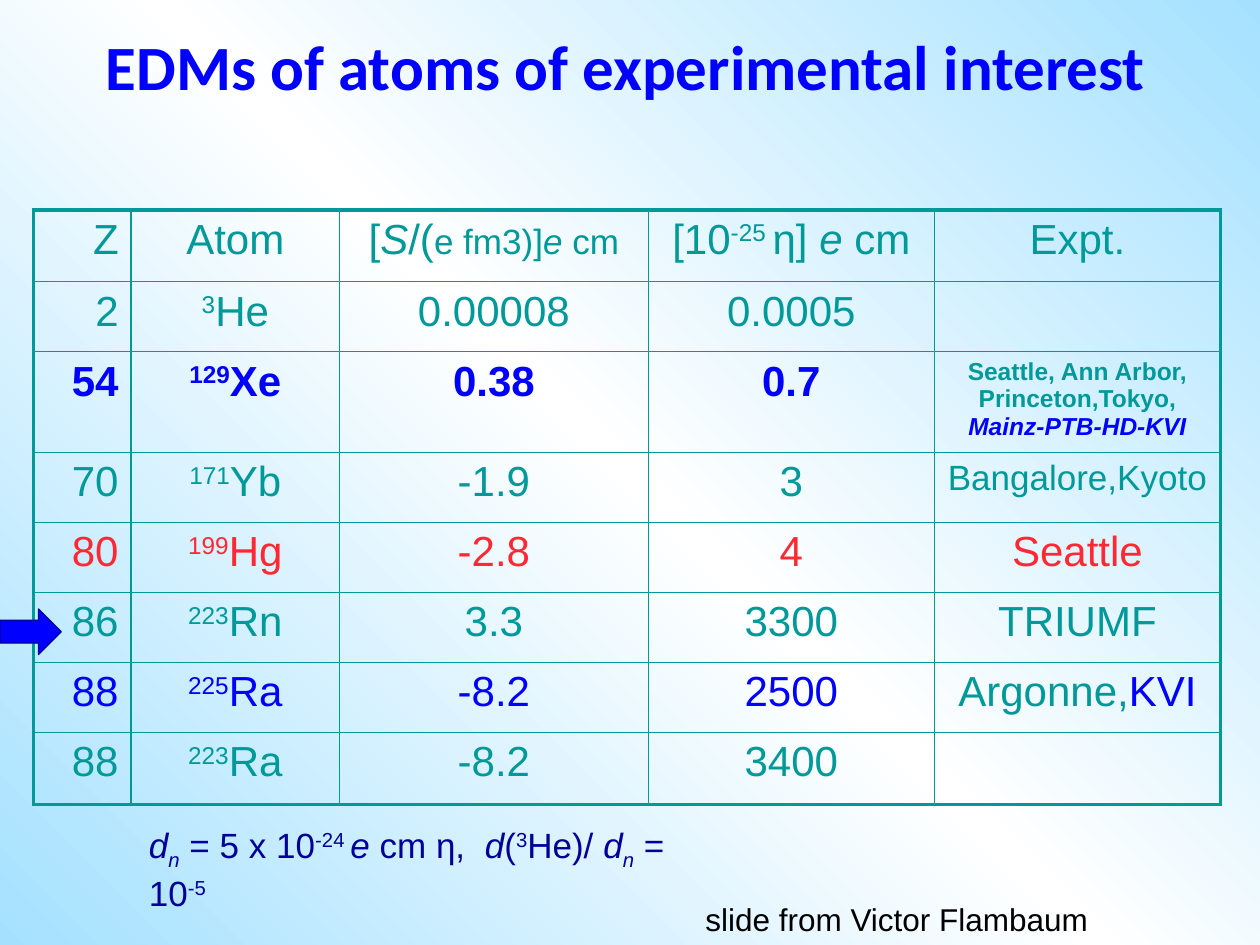
from copy import deepcopy
from dataclasses import dataclass

from lxml import etree
from pptx import Presentation
from pptx.dml.color import RGBColor
from pptx.enum.shapes import MSO_SHAPE
from pptx.enum.text import PP_ALIGN
from pptx.oxml.ns import qn
from pptx.util import Pt

LEFT, CENTER, RIGHT = PP_ALIGN.LEFT, PP_ALIGN.CENTER, PP_ALIGN.RIGHT
RIGHT_ARROW = MSO_SHAPE.RIGHT_ARROW


@dataclass(frozen=True)
class Theme:
    teal: str = "009999"
    blue: str = "0000FF"
    navy: str = "000099"
    red: str = "FF2833"
    black: str = "000000"
    sky: str = "A5E1FF"
    white: str = "FFFFFF"
    head_font: str = "Calibri"
    body_font: str = "Arial"
    title: int = 36
    cell: int = 24
    note: int = 20
    credit: int = 18
    small: int = 14
    outer: float = 2.25
    inner: float = 1


T = Theme()
ITALIC = {"italic": True}
SUP = {"base": 30000}
SUB = {"base": -25000}
SMALLER = {"size": T.note}
SITES = {"size": T.small, "bold": True}

COL_WIDTHS = [56, 119, 176.5, 163.5, 163.5]
ROW_HEIGHTS = [41, 40, 54.3, 40, 40, 40, 40, 41]
HEADER = [
    [("Z", {})],
    [("Atom", {})],
    [("[", {}), ("S", ITALIC), ("/(", {}), ("e fm3)]", SMALLER),
     ("e", SMALLER | ITALIC), (" cm", SMALLER)],
    [("[10", {}), ("-25 ", SUP), ("η] ", {}), ("e", ITALIC), (" cm", {})],
    [("Expt.", {})],
]
ATOMS = [
    ("2", "3", "He", "0.00008", "0.0005", [], {}),
    ("54", "129", "Xe", "0.38", "0.7",
     [("Seattle, Ann Arbor, Princeton,Tokyo, ", SITES | {"color": T.teal}),
      ("Mainz-PTB-HD-KVI", SITES | ITALIC)],
     {"color": T.blue, "bold": True}),
    ("70", "171", "Yb", "-1.9", "3", [("Bangalore,Kyoto", SMALLER)], {}),
    ("80", "199", "Hg", "-2.8", "4", [("Seattle", {})], {"color": T.red}),
    ("86", "223", "Rn", "3.3", "3300", [("TRIUMF", {})], {}),
    ("88", "225", "Ra", "-8.2", "2500",
     [("Argonne,", {"color": T.teal}), ("KVI", {})], {"color": T.blue}),
    ("88", "223", "Ra", "-8.2", "3400", [], {}),
]
NEUTRON = [
    ("d", ITALIC), ("n", ITALIC | SUB), (" = 5 x 10", {}), ("-24 ", SUP),
    ("e", ITALIC), (" cm η,  ", {}), ("d", ITALIC), ("(", {}), ("3", SUP),
    ("He)/ ", {}), ("d", ITALIC), ("n", ITALIC | SUB), (" = 10", {}), ("-5", SUP),
]


def rgb(color):
    return RGBColor.from_string(color)


def add_runs(p, runs, base, align):
    p.alignment = align
    for text, extra in runs:
        fmt = {"name": T.body_font} | base | extra
        r = p.add_run()
        r.text = text
        r.font.color.rgb = rgb(fmt.pop("color"))
        r.font.size = Pt(fmt.pop("size"))
        shift = fmt.pop("base", 0)
        if shift:
            r._r.get_or_add_rPr().set("baseline", str(shift))
        for key, value in fmt.items():
            setattr(r.font, key, value)


def add_background(s):
    fill = s.background.fill
    fill.gradient()
    fill.gradient_angle = 45
    first = fill.gradient_stops[0]._gs
    first.addnext(deepcopy(first))
    for stop, color, position in zip(
            fill.gradient_stops, (T.sky, T.white, T.sky), (0, 0.5, 1)):
        stop.color.rgb = rgb(color)
        stop.color.brightness = 0
        stop.position = position


def add_text(s, box, runs, base, align=LEFT, spacing=None):
    tf = s.shapes.add_textbox(*map(Pt, box)).text_frame
    tf.word_wrap = True
    p = tf.paragraphs[0]
    p.line_spacing = spacing
    add_runs(p, runs, base, align)


def set_borders(cell, widths):
    tcPr = cell._tc.get_or_add_tcPr()
    for side, width in widths.items():
        ln = etree.SubElement(tcPr, qn(f"a:ln{side}"), w=str(Pt(width)))
        solid = etree.SubElement(ln, qn("a:solidFill"))
        etree.SubElement(solid, qn("a:srgbClr"), val=T.teal)


def atom_cells(z, mass, symbol, schiff, eta, sites):
    return [[(z, {})], [(mass, SUP), (symbol, {})],
            [(schiff, {})], [(eta, {})], sites]


def add_atom_table(s, box):
    rows = [(HEADER, {})] + [(atom_cells(*a[:-1]), a[-1]) for a in ATOMS]
    last_row, last_col = len(rows) - 1, len(COL_WIDTHS) - 1
    table = s.shapes.add_table(len(rows), len(COL_WIDTHS), *map(Pt, box)).table
    table.first_row = table.horz_banding = False
    for column, width in zip(table.columns, COL_WIDTHS):
        column.width = Pt(width)
    for row, height in zip(table.rows, ROW_HEIGHTS):
        row.height = Pt(height)
    for i, (cells, row_fmt) in enumerate(rows):
        base = {"color": T.teal, "size": T.cell} | row_fmt
        for j, runs in enumerate(cells):
            cell = table.cell(i, j)
            edges = {"L": j == 0, "R": j == last_col, "T": i == 0, "B": i == last_row}
            set_borders(cell, {side: T.outer if edge else T.inner
                               for side, edge in edges.items()})
            cell.fill.background()
            add_runs(cell.text_frame.paragraphs[0], runs, base,
                     RIGHT if j == 0 else CENTER)


def add_row_arrow(s, box):
    sp = s.shapes.add_shape(RIGHT_ARROW, *map(Pt, box))
    sp.shadow.inherit = False
    sp.fill.solid()
    sp.fill.fore_color.rgb = rgb(T.blue)
    sp.line.color.rgb = rgb(T.navy)
    sp.line.width = Pt(0.75)


def main():
    prs = Presentation()
    prs.slide_width, prs.slide_height = Pt(720), Pt(540)
    s = prs.slides.add_slide(prs.slide_layouts[6])
    add_background(s)
    add_text(s, (42, 24, 631, 72), [("EDMs of atoms of experimental interest", {})],
             {"name": T.head_font, "size": T.title, "color": T.blue, "bold": True},
             CENTER, 0.7)
    add_atom_table(s, (19, 120, sum(COL_WIDTHS), sum(ROW_HEIGHTS)))
    add_text(s, (78, 467, 322, 32), NEUTRON, {"size": T.note, "color": T.navy})
    add_text(s, (396, 511, 236, 29), [("slide from Victor Flambaum", {})],
             {"size": T.credit, "color": T.black})
    add_row_arrow(s, (0, 348, 35, 26))
    prs.save("out.pptx")


if __name__ == "__main__":
    main()
